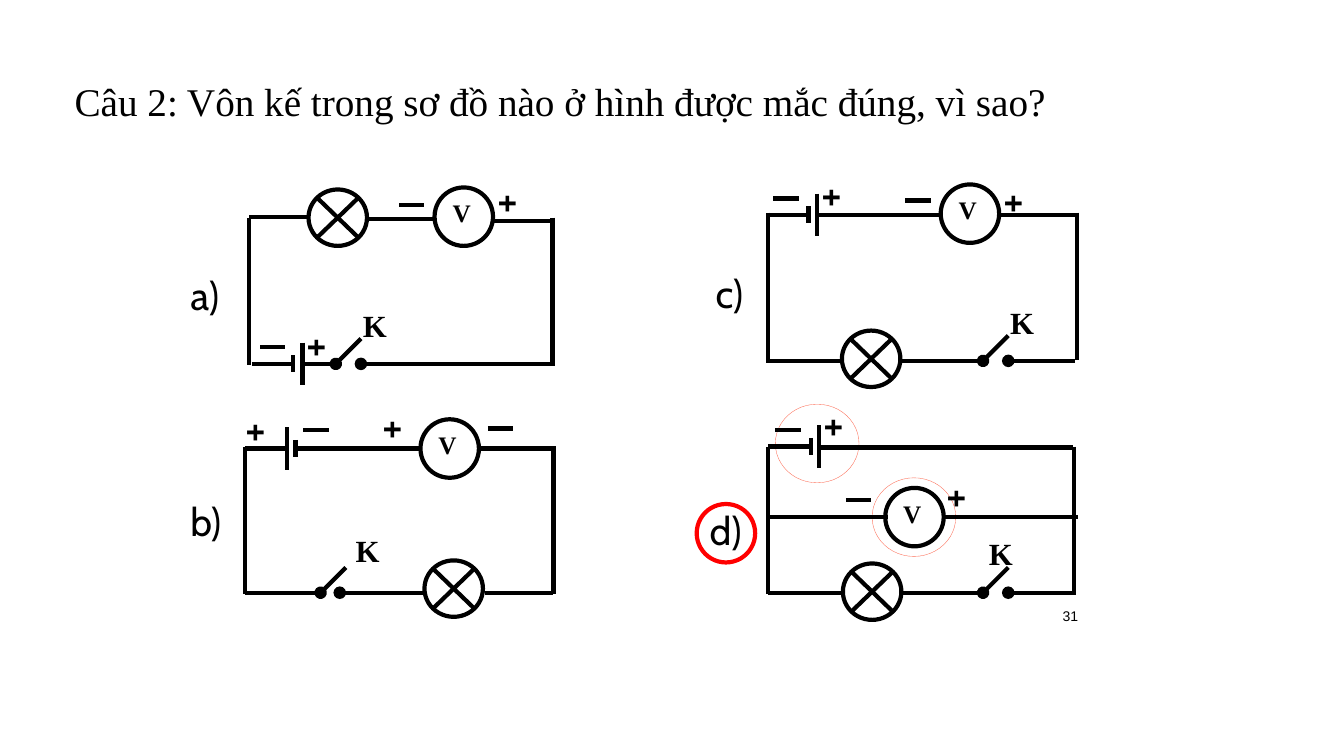
from lxml.etree import SubElement
from pptx import Presentation
from pptx.dml.color import RGBColor
from pptx.enum.shapes import MSO_CONNECTOR, MSO_SHAPE
from pptx.enum.text import MSO_ANCHOR, MSO_AUTO_SIZE, PP_ALIGN
from pptx.oxml.ns import qn
from pptx.util import Inches, Pt

TITLE = "Câu 2: Vôn kế trong sơ đồ nào ở hình được mắc đúng, vì sao?"
PAGE = "31"
COLORS = {"ink": "000000", "answer": "FF0000", "hint": "FD6D55"}
SERIF, SANS, PLAIN = "Times New Roman", "Cabin", "Arial"

# Inches. Everything in a circuit is measured from its top-left corner.
# wires: (x1, x2, y); battery: (short plate x, long plate x, y);
# switch: (pivot x, contact x, wire end x, y); the rest: (x, y)
CIRCUITS = [
    {"label": "b)", "corner": (2.43, 4.43), "width": 3.06,
     "wires": [(0, .42, .02), (.5, 1.75, .02), (2.33, 3.08, .02),
               (0, .75, 1.45), (2.38, 3.05, 1.45)],
     "battery": (.5, .42, .02), "switch": (.75, .94, 1.77, 1.45),
     "meter": (1.74, -.27), "lamp": (1.78, 1.13),
     "label_at": (-.64, .45), "key_at": (1, .8),
     "plus": [(1.27, -.53), (-.09, -.5)], "minus": [(2.41, -.18), (.58, -.16)]},
    {"label": "a)", "corner": (2.47, 2.16), "width": 3.01,
     "wires": [(0, .59, -.01), (1.17, 1.84, .01), (2.42, 3, .03),
               (.03, .44, 1.45), (.53, .86, 1.45)],
     "battery": (.44, .53, 1.45), "switch": (.86, 1.11, 3.03, 1.45),
     "meter": (1.84, -.3), "lamp": (.59, -.28),
     "label_at": (-.68, .48), "key_at": (1.03, .83),
     "plus": [(2.37, -.51), (.47, .92)], "minus": [(1.49, -.13), (.11, 1.28)]},
    {"label": "c)", "corner": (7.62, 2.11), "width": 3.06,
     "wires": [(-.02, .4, .02), (.48, 1.73, .02), (2.31, 3.06, .02),
               (-.02, .73, 1.47), (1.32, 2.15, 1.47)],
     "battery": (.4, .48, .02), "switch": (2.13, 2.38, 3.04, 1.47),
     "meter": (1.71, -.28), "lamp": (.73, 1.17),
     "label_at": (-.62, .51), "key_at": (2.3, .85),
     "plus": [(2.23, -.46), (.43, -.52)], "minus": [(1.36, -.12), (.05, -.14)]},
    {"label": "d)", "corner": (7.62, 4.43), "width": 3.03,
     "wires": [(0, .42, 0), (.52, 3.02, .01), (.02, 1.19, .7),
               (1.74, 3.07, .7), (0, .75, 1.45), (1.32, 2.16, 1.45)],
     "battery": (.42, .5, 0), "switch": (2.13, 2.38, 3.05, 1.45),
     "meter": (1.16, .41), "lamp": (.74, 1.16),
     "label_at": (-.68, .54), "key_at": (2.09, .83),
     "plus": [(1.67, .15), (.45, -.55)], "minus": [(.77, .53), (.07, -.16)]},
]
# (x, y, width, height, colour, line width)
RINGS = [
    (7.69, 4.01, .83, .78, "hint", .25),
    (8.65, 4.74, .83, .78, "hint", .25),
    (6.91, 5, .58, .58, "answer", 3),
]
POST_HEIGHT = 1.46
SHORT_PLATE, LONG_PLATE = .17, .42
MINUS_WIDTH = .25
LEVER = .25


def style_text(tf, text, size, font, bold=False):
    tf.text = text
    f = tf.paragraphs[0].runs[0].font
    f.size, f.name, f.bold = Pt(size), font, bold
    f.color.rgb = RGBColor.from_string(COLORS["ink"])
    tf.paragraphs[0].alignment = PP_ALIGN.LEFT
    tf.vertical_anchor = MSO_ANCHOR.TOP


def add_text(shapes, text, box, size, font, bold=False):
    tf = shapes.add_textbox(*map(Inches, box)).text_frame
    style_text(tf, text, size, font, bold)
    tf.word_wrap = False
    tf.auto_size = MSO_AUTO_SIZE.SHAPE_TO_FIT_TEXT


def add_outline(shapes, kind, box, color="ink", width=3):
    sp = shapes.add_shape(kind, *map(Inches, box))
    sp.shadow.inherit = False
    sp.fill.background()
    sp.line.color.rgb = RGBColor.from_string(COLORS[color])
    sp.line.width = Pt(width)


def add_line(shapes, x1, y1, x2, y2, dot=False):
    """Draw a wire, with a contact dot at its start if asked."""
    c = shapes.add_connector(MSO_CONNECTOR.STRAIGHT, *map(Inches, (x1, y1, x2, y2)))
    c.line.color.rgb = RGBColor.from_string(COLORS["ink"])
    c.line.width = Pt(3)
    if dot:
        SubElement(c.line._get_or_add_ln(), qn("a:headEnd"), type="oval")
    SubElement(c._element.spPr, qn("a:effectLst"))


def add_circuit(shapes, circuit):
    left, top = circuit["corner"]

    def line(x1, y1, x2, y2, dot=False):
        add_line(shapes, left + x1, top + y1, left + x2, top + y2, dot)

    def text(value, at, size, box, font=SANS, bold=False):
        add_text(shapes, value, (left + at[0], top + at[1], *box), size, font, bold)

    for x1, x2, y in circuit["wires"]:
        line(x1, y, x2, y)
    for x in (0, circuit["width"]):
        line(x, 0, x, POST_HEIGHT)

    short, long, y = circuit["battery"]
    for x, height in ((short, SHORT_PLATE), (long, LONG_PLATE)):
        line(x, y - height / 2, x, y + height / 2)

    pivot, contact, end, y = circuit["switch"]
    line(pivot, y, pivot + LEVER, y - LEVER, dot=True)
    line(contact, y, end, y, dot=True)
    text("K", circuit["key_at"], 22, (.44, .47), SERIF, True)

    x, y = circuit["meter"]
    add_outline(shapes, MSO_SHAPE.OVAL, (left + x, top + y, .58, .58))
    text("V", (x + .08, y + .05), 18, (.38, .4), SERIF, True)
    x, y = circuit["lamp"]
    add_outline(shapes, MSO_SHAPE.FLOWCHART_SUMMING_JUNCTION,
                (left + x, top + y, .58, .56))

    for at in circuit["plus"]:
        text("+", at, 32, (.52, .64))
    for x, y in circuit["minus"]:
        line(x, y, x + MINUS_WIDTH, y)
    text(circuit["label"], circuit["label_at"], 28, (.55, .57))


def main():
    prs = Presentation()
    prs.slide_width, prs.slide_height = Inches(13.33), Inches(7.5)
    s = prs.slides.add_slide(prs.slide_layouts[5])

    title = s.shapes.title
    title.left, title.top, title.width, title.height = map(
        Inches, (.64, .72, 11.37, .57))
    style_text(title.text_frame, TITLE, 28, SERIF)
    title.text_frame.auto_size = MSO_AUTO_SIZE.NONE

    for *box, color, width in RINGS:
        add_outline(s.shapes, MSO_SHAPE.OVAL, box, color, width)
    add_text(s.shapes, PAGE, (10.44, 5.98, .42, .27), 10, PLAIN)
    for circuit in CIRCUITS:
        add_circuit(s.shapes.add_group_shape().shapes, circuit)

    prs.save("out.pptx")


if __name__ == "__main__":
    main()
